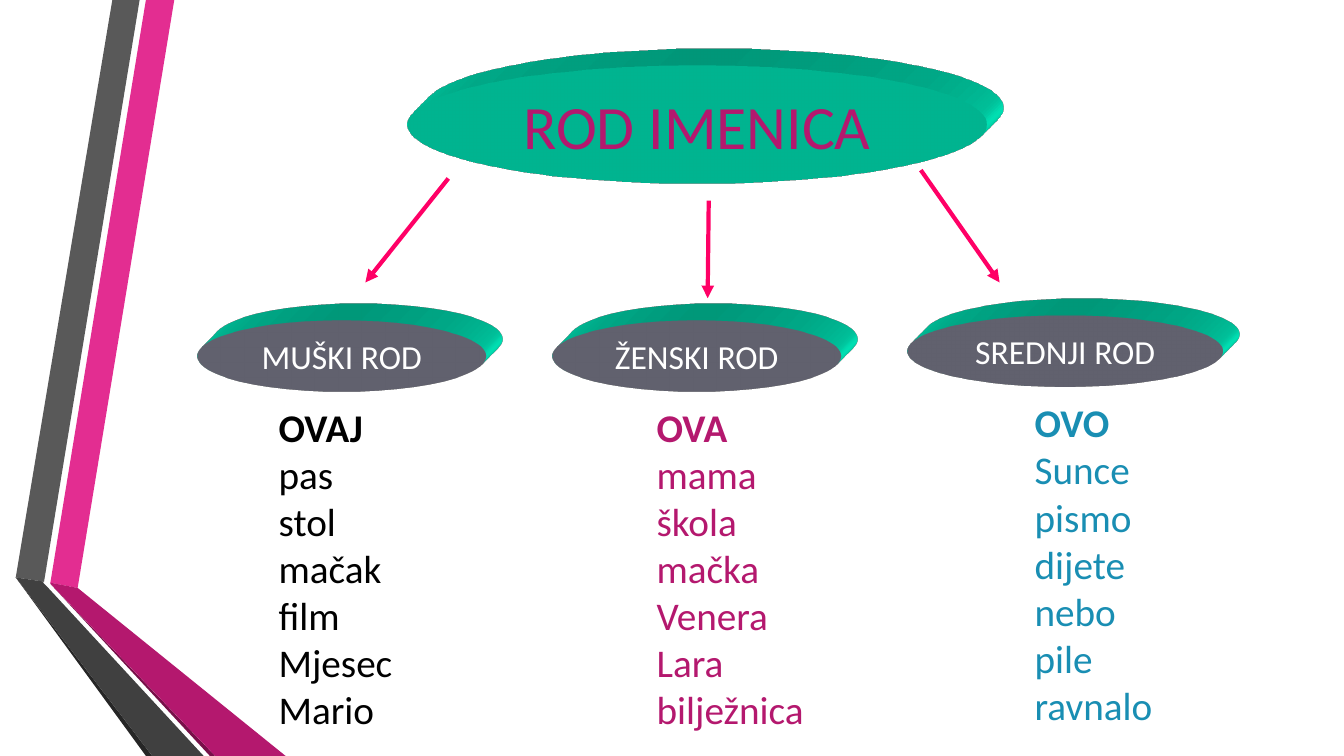
from pptx import Presentation
from pptx.dml.color import RGBColor
from pptx.enum.shapes import MSO_CONNECTOR, MSO_SHAPE
from pptx.enum.text import MSO_ANCHOR, MSO_AUTO_SIZE, PP_ALIGN
from pptx.oxml import parse_xml
from pptx.oxml.ns import nsdecls, qn
from pptx.util import Pt

PX = 9525  # EMU in one px, 96 px to the inch
OVAL = MSO_SHAPE.OVAL
LINE = MSO_CONNECTOR.STRAIGHT
MIDDLE, TOP = MSO_ANCHOR.MIDDLE, MSO_ANCHOR.TOP
CENTER, LEFT = PP_ALIGN.CENTER, PP_ALIGN.LEFT
NO_FIT = MSO_AUTO_SIZE.NONE

THEME = {
    "font": "Calibri",
    "title": 44, "head": 24, "word": 28, "arrow": 3,
    "green": "00FFCC", "slate": "8A8A9C", "red": "FF0066",
    "white": "FFFFFF", "black": "000000",
    "plum": "B4186E", "blue": "198EB3",
}

# Ribbon facets: colour and outline, from back to front
FACETS = [
    ("E32D91", [(48, 555), (74, 560), (166, 0), (139, 0)]),
    ("595959", [(133, 0), (107, 0), (15, 550), (42, 554)]),
    ("262626", [(15, 550), (139, 720), (145, 720)]),
    ("781049", [(48, 556), (200, 720), (205, 720)]),
    ("B4186E", [(48, 556), (205, 720), (272, 720), (74, 560), (48, 555)]),
    ("404040", [(194, 720), (46, 560), (41, 555), (42, 554), (15, 550),
                (145, 720)]),
]

# Each gender: heading, its oval, colour, list top, words
GENDERS = [
    ("MUŠKI ROD", (188, 305, 275, 68), "black", 379,
     ["OVAJ", "pas", "stol", "mačak", "film", "Mjesec", "Mario"]),
    ("ŽENSKI ROD", (526, 305, 275, 68), "plum", 379,
     ["OVA", "mama", "škola", "mačka", "Venera", "Lara", "bilježnica"]),
    ("SREDNJI ROD", (864, 300, 301, 68), "blue", 375,
     ["OVO", "Sunce", "pismo", "dijete", "nebo", "pile", "ravnalo"]),
]
ARROWS = [(427, 170, 348, 269), (877, 162, 952, 269), (675, 191, 674, 284)]

CAMERA = """<a:scene3d %s><a:camera prst="legacyObliqueTopRight"/>
<a:lightRig rig="legacyFlat3" dir="b"/></a:scene3d>"""
DEPTH = """<a:sp3d %s extrusionH="430200" prstMaterial="legacyMatrix">
<a:bevelT w="13500" h="13500" prst="angle"/>
<a:bevelB w="13500" h="13500" prst="angle"/>
<a:extrusionClr><a:srgbClr val="%s"/></a:extrusionClr></a:sp3d>"""


def emu(*nums):
    return [n * PX for n in nums]


def rgb(name):
    return RGBColor.from_string(THEME.get(name, name))


def apply(item, form):
    for key, value in form.items():
        setattr(item, key, value)


def paint(shape, color):
    shape.fill.solid()
    shape.fill.fore_color.rgb = rgb(color)
    shape.line.fill.background()
    shape.shadow.inherit = False


def write(shape, lines, size, color, align, anchor):
    frame = shape.text_frame
    apply(frame, {"word_wrap": True, "auto_size": NO_FIT,
                  "vertical_anchor": anchor})
    for i, (text, bold) in enumerate(lines):
        para = frame.paragraphs[0] if i == 0 else frame.add_paragraph()
        para.alignment = align
        run = para.add_run()
        run.text = text
        apply(run.font, {"name": THEME["font"], "size": Pt(THEME[size]),
                         "bold": bold})
        run.font.color.rgb = rgb(color)


def ribbon(slide, box):
    """Folded ribbon along the left edge."""
    x, y = box[:2]
    for color, dots in FACETS:
        dots = [(x + a, y + b) for a, b in dots]
        pen = slide.shapes.build_freeform(*dots[0], scale=PX)
        pen.add_line_segments(dots[1:], close=True)
        paint(pen.convert_to_shape(), color)


def disc(slide, box, text, size, fill, color):
    """Extruded oval with a centred label."""
    shape = slide.shapes.add_shape(OVAL, *emu(*box))
    paint(shape, fill)
    props = shape.element.spPr
    props.append(parse_xml(CAMERA % nsdecls("a")))
    props.append(parse_xml(DEPTH % (nsdecls("a"), THEME["green"])))
    write(shape, [(text, False)], size, color, CENTER, MIDDLE)


def words(slide, box, items, color):
    """Word list under a bold pronoun."""
    shape = slide.shapes.add_textbox(*emu(*box))
    lines = [(item, i == 0) for i, item in enumerate(items)]
    write(shape, lines, "word", color, LEFT, TOP)


def links(slide, box):
    """Arrows from the title to the three genders."""
    x, y = box[:2]
    for x1, y1, x2, y2 in ARROWS:
        ends = emu(x + x1, y + y1, x + x2, y + y2)
        link = slide.shapes.add_connector(LINE, *ends)
        link.line.color.rgb = rgb("red")
        link.line.width = Pt(THEME["arrow"])
        props = link.element.spPr
        head = parse_xml('<a:tailEnd %s type="triangle"/>' % nsdecls("a"))
        props.find(qn("a:ln")).append(head)
        props.append(parse_xml("<a:effectLst %s/>" % nsdecls("a")))


def tree(slide, box):
    """Title, arrows and one column for each gender."""
    x, y = box[:2]
    disc(slide, (x + 388, y + 62, 552, 113), "ROD IMENICA",
         "title", "green", "plum")
    links(slide, box)
    for i, (name, oval, color, top, items) in enumerate(GENDERS):
        left, high, wide, tall = oval
        disc(slide, (x + left, y + high, wide, tall), name,
             "head", "slate", "white")
        words(slide, (x + 256 + 360 * i, y + top, 184, 326), items, color)


def main():
    deck = Presentation()
    wide, tall = 1280, 720
    apply(deck, {"slide_width": wide * PX, "slide_height": tall * PX})
    slide = deck.slides.add_slide(deck.slide_layouts[6])
    page = (0, 0, wide, tall)
    ribbon(slide, page)
    tree(slide, page)
    deck.save("out.pptx")


if __name__ == "__main__":
    main()
